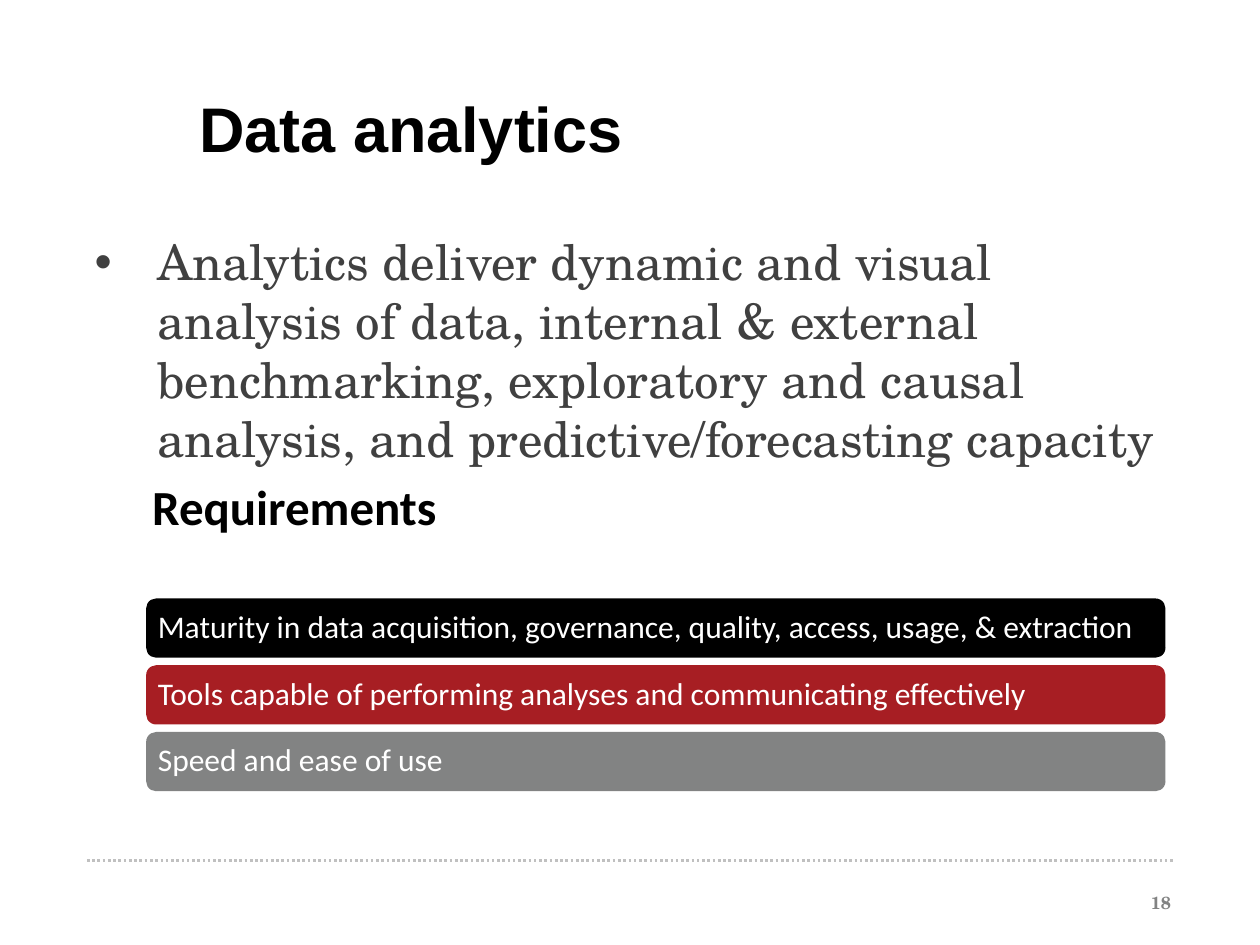
from lxml.etree import SubElement
from pptx import Presentation
from pptx.dml.color import RGBColor
from pptx.enum.dml import MSO_LINE
from pptx.enum.shapes import MSO_CONNECTOR, MSO_SHAPE
from pptx.enum.text import MSO_ANCHOR, PP_ALIGN
from pptx.oxml.ns import qn
from pptx.util import Pt

PX = 9144  # 100 px to the inch
SERIF = "TeX Gyre Schola"


def px(*lengths):
    return [length * PX for length in lengths]


def add_run(paragraph, text, size, font, color, bold=False):
    run = paragraph.add_run()
    run.text = text
    run.font.size = Pt(size)
    run.font.name = font
    run.font.bold = bold
    run.font.color.rgb = RGBColor.from_string(color)


presentation = Presentation()
presentation.slide_width, presentation.slide_height = px(1000, 750)
slide = presentation.slides.add_slide(presentation.slide_layouts[1])
shapes = slide.shapes

# Footer rule
rule = shapes.add_connector(MSO_CONNECTOR.STRAIGHT, *px(69, 683, 932, 683))
rule.line.color.rgb = RGBColor.from_string("C0C0C0")
rule.line.width = Pt(1.5)
rule.line.dash_style = MSO_LINE.ROUND_DOT
SubElement(rule._element.spPr, qn("a:effectLst"))

# Title
title = shapes.title
title.left, title.top, title.width, title.height = px(65, 74, 874, 90)
frame = title.text_frame
frame.vertical_anchor = MSO_ANCHOR.TOP
frame.margin_left, frame.margin_top = px(93, 9)
paragraph = frame.paragraphs[0]
paragraph.alignment = PP_ALIGN.LEFT
paragraph.line_spacing = 0.8
add_run(paragraph, "Data analytics", 36, "Arial", "000000", True)

# Body
body = slide.placeholders[1]
body.left, body.top, body.width, body.height = px(65, 179, 874, 452)
paragraph = body.text_frame.paragraphs[0]
properties = paragraph._p.get_or_add_pPr()
properties.set("marL", str(50 * PX))
properties.set("indent", str(-50 * PX))
SubElement(properties, qn("a:buChar"), char="•")
paragraph.space_before = Pt(0)
add_run(
    paragraph,
    "Analytics deliver dynamic and visual analysis of data, internal & external "
    "benchmarking, exploratory and causal analysis, and predictive/forecasting capacity",
    28, SERIF, "404040",
)

# Slide number
number = shapes.add_textbox(*px(714, 703, 225, 40))
number.text_frame.word_wrap = True
paragraph = number.text_frame.paragraphs[0]
paragraph.alignment = PP_ALIGN.RIGHT
add_run(paragraph, "18", 10, SERIF, "828383", True)

# Requirements
heading = shapes.add_textbox(*px(111, 373, 248, 57))
heading.text_frame.word_wrap = False
add_run(heading.text_frame.paragraphs[0], "Requirements", 28, "Calibri", "000000", True)

requirements = [
    ("Maturity in data acquisition, governance, quality, access, usage, & extraction", "000000"),
    ("Tools capable of performing analyses and communicating effectively", "A71E23"),
    ("Speed and ease of use", "828383"),
]
for index, (text, color) in enumerate(requirements):
    bar = shapes.add_shape(
        MSO_SHAPE.ROUNDED_RECTANGLE, *px(116, 475 + 53 * index, 809, 47)
    )
    bar.shadow.inherit = False
    bar.fill.solid()
    bar.fill.fore_color.rgb = RGBColor.from_string(color)
    bar.line.fill.background()
    frame = bar.text_frame
    frame.word_wrap = True
    frame.vertical_anchor = MSO_ANCHOR.MIDDLE
    # The rounded corner already insets the text by about 2 px
    frame.margin_left, frame.margin_right = px(7, 7)
    paragraph = frame.paragraphs[0]
    paragraph.alignment = PP_ALIGN.LEFT
    paragraph.line_spacing = 0.9
    add_run(paragraph, text, 18, "Calibri", "FFFFFF")

presentation.save("out.pptx")
